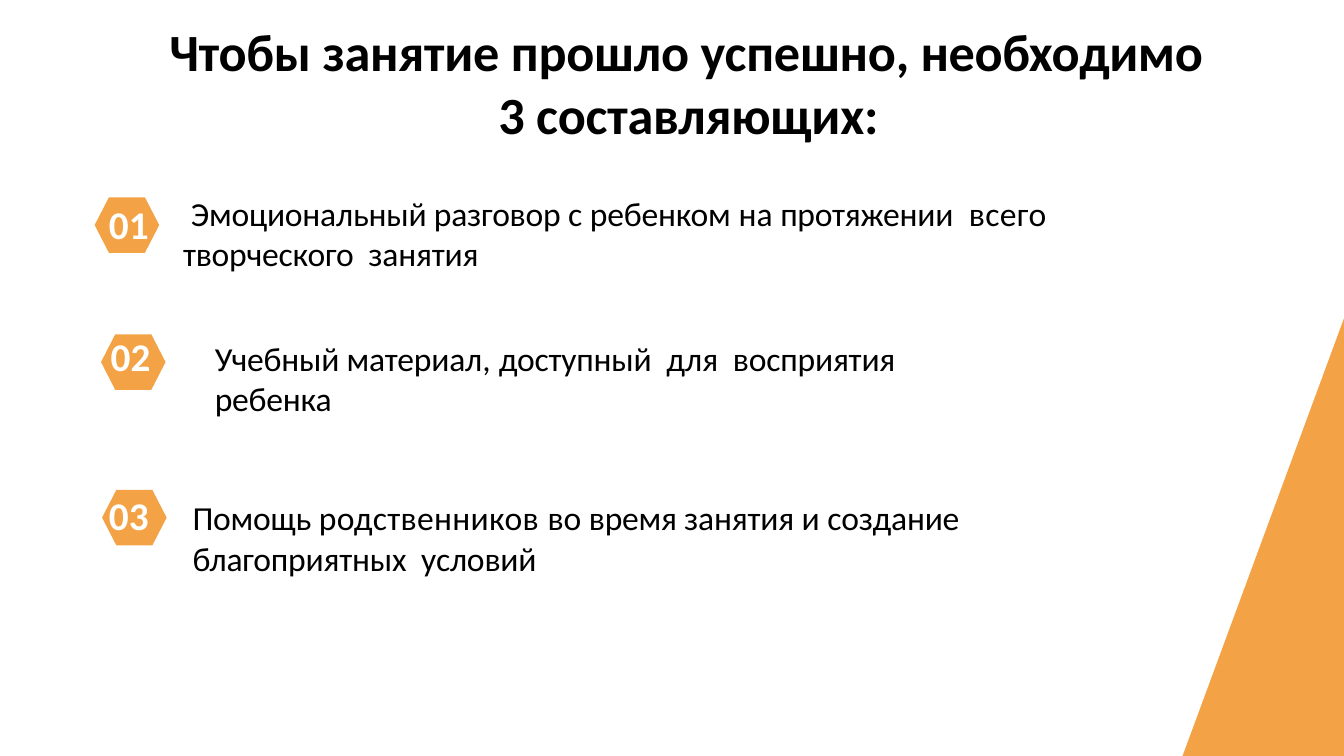
from dataclasses import dataclass

from pptx import Presentation
from pptx.dml.color import RGBColor
from pptx.enum.text import MSO_ANCHOR as Anchor, MSO_AUTO_SIZE as AutoSize, PP_ALIGN as Align
from pptx.util import Cm, Pt


@dataclass(frozen=True)
class Theme:
    font: str = "Calibri"
    accent: str = "F3A346"
    ink: str = "000000"
    paper: str = "FFFFFF"
    title_size: float = 28
    number_size: float = 21
    body_size: float = 18


class SlideBuilder:
    def __init__(self, slide, theme):
        self.slide = slide
        self.theme = theme

    def background(self):
        fill = self.slide.background.fill
        fill.solid()
        fill.fore_color.rgb = RGBColor.from_string(self.theme.paper)

    def polygon(self, points):
        points = [(Cm(x), Cm(y)) for x, y in points]
        builder = self.slide.shapes.build_freeform(*points[0])
        builder.add_line_segments(points[1:], close=True)
        shape = builder.convert_to_shape()
        shape.shadow.inherit = False
        shape.fill.solid()
        shape.fill.fore_color.rgb = RGBColor.from_string(self.theme.accent)
        shape.line.fill.background()

    def hexagon(self, left, top, width=1.22, height=1.05, inset=0.27):
        right, middle, bottom = left + width, top + height / 2, top + height
        self.polygon([(right - inset, top), (left + inset, top), (left, middle),
                      (left + inset, bottom), (right - inset, bottom), (right, middle)])

    def add_runs(self, shape, runs, size, color, bold=False, margins=(0, 0.03, 0, 0),
                 indent=(0.03, 0), before=1):
        frame = shape.text_frame
        frame.word_wrap = True
        frame.auto_size = AutoSize.NONE
        frame.vertical_anchor = Anchor.TOP
        (frame.margin_left, frame.margin_top,
         frame.margin_right, frame.margin_bottom) = map(Cm, margins)
        paragraph = frame.paragraphs[0]
        paragraph.alignment = Align.LEFT
        paragraph.space_before = Pt(before)
        properties = paragraph._p.get_or_add_pPr()
        properties.set("marL", str(Cm(indent[0])))
        properties.set("indent", str(Cm(indent[1])))
        for text, spacing in runs:
            run = paragraph.add_run()
            run.text = text
            run.font.name = self.theme.font
            run.font.size = Pt(size)
            run.font.bold = bold
            run.font.color.rgb = RGBColor.from_string(color)
            run._r.get_or_add_rPr().set("spc", str(round(spacing * 100)))

    def title(self, box, runs):
        shape = self.slide.shapes.title
        shape.left, shape.top, shape.width, shape.height = map(Cm, box)
        self.add_runs(shape, runs, self.theme.title_size, self.theme.ink, bold=True,
                      margins=(0, 0.41, 0, 0), indent=(7.11, -6.22), before=0.9)

    def text(self, box, runs, **style):
        shape = self.slide.shapes.add_textbox(*map(Cm, box))
        self.add_runs(shape, runs, self.theme.body_size, self.theme.ink, **style)

    def number(self, left, top, label, spacing):
        shape = self.slide.shapes.add_textbox(Cm(left), Cm(top), Cm(0.84), Cm(0.97))
        self.add_runs(shape, [(label, spacing)], self.theme.number_size, self.theme.paper,
                      bold=True)


TITLE = [("Чтобы занятие прошло успешно, ", -0.1), ("необходимо  ", -0.2),
         ("3 составляющих:", -0.1)]
TALK = [(" ", 0.1), ("Эмоциональный разговор ", -0.1), ("с ", 0), ("ребенком", -0.1),
        (" на ", 0), ("протяжении ", -0.1), (" всего ", 0.2), ("творческого  занятия", -0.1)]
MATERIAL = [("Учебный материал", -0.1), (", ", 0.1), ("доступный  ", -0.1), ("для", 0),
            ("  восприятия   ребенка", -0.1)]
SUPPORT = [("Помощь ", -0.1), ("родственников ", 0.2), ("во ", 0), ("время занятия ", -0.1),
           ("и ", 0), ("создание  благоприятных  условий", -0.1)]
INSET_STYLE = {"margins": (0.25, 0.13, 0.25, 0.13), "indent": (0, 0), "before": 0}
ITEMS = [
    ((1.79, 3.73), (2.03, 3.76), 0, (3.43, 3.61, 18.64, 1.57), TALK, {}),
    ((1.91, 6.32), (2.06, 6.25), 0.1, (3.81, 6.25, 15.24, 1.8), MATERIAL, INSET_STYLE),
    ((1.93, 9.26), (2.03, 9.25), 0.1, (3.61, 9.37, 18.29, 1.57), SUPPORT, {}),
]


def main():
    presentation = Presentation()
    presentation.slide_width, presentation.slide_height = Cm(25.4), Cm(14.29)
    slide = presentation.slides.add_slide(presentation.slide_layouts[5])
    builder = SlideBuilder(slide, Theme())
    builder.background()
    builder.title((2.31, -0.05, 20.78, 2.82), TITLE)
    builder.polygon([(25.4, 6.02), (22.35, 14.29), (25.4, 14.29)])
    for index, (badge, label, spacing, box, runs, style) in enumerate(ITEMS, start=1):
        builder.hexagon(*badge)
        builder.number(*label, f"{index:02}", spacing)
        builder.text(box, runs, **style)
    presentation.save("out.pptx")


if __name__ == "__main__":
    main()
